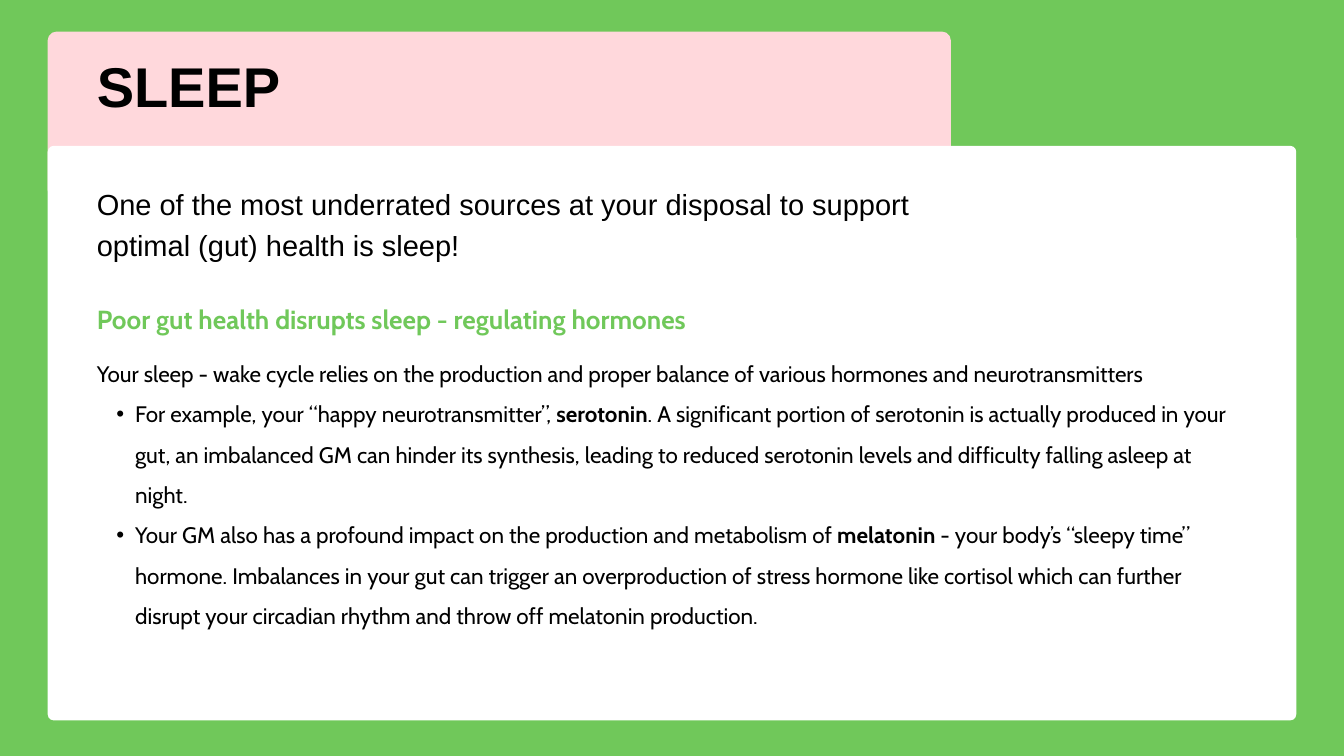
from lxml import etree
from pptx import Presentation
from pptx import util as u
from pptx.dml.color import RGBColor
from pptx.enum import shapes, text
from pptx.oxml import ns

PX = 9144  # 100 px to the inch
GREEN, PINK, WHITE, BLACK = "70C85A", "FFD8DC", "FFFFFF", "000000"


def color(value):
    return RGBColor.from_string(value)


def add_paragraph(box, index, spacing, spans, size, font, ink=BLACK):
    """Write one paragraph from (words, bold) spans."""
    frame = box.text_frame
    if index == 0:
        frame.margin_left = frame.margin_top = 0
        frame.margin_right = frame.margin_bottom = 0
        frame.word_wrap = True
        frame.auto_size = text.MSO_AUTO_SIZE.NONE
        frame.vertical_anchor = text.MSO_ANCHOR.TOP
    para = frame.paragraphs[0] if index == 0 else frame.add_paragraph()
    para.alignment = text.PP_ALIGN.LEFT
    para.line_spacing = u.Pt(spacing)
    for words, bold in spans:
        span = para.add_run()
        span.text = words
        span.font.size = u.Pt(size)
        span.font.name = font
        span.font.bold = bold
        span.font.color.rgb = color(ink)
    return para


deck = Presentation()
deck.slide_width, deck.slide_height = 2000 * PX, 1125 * PX
page = deck.slides.add_slide(deck.slide_layouts[5])
page.background.fill.solid()
page.background.fill.fore_color.rgb = color(GREEN)

# Pink tab behind the white card
panels = [
    (71, 47, 1344, 249, 13, PINK),
    (71, 217, 1858, 855, 9, WHITE),
]
for left, top, width, height, radius, fill in panels:
    panel = page.shapes.add_shape(
        shapes.MSO_SHAPE.ROUNDED_RECTANGLE,
        left * PX, top * PX, width * PX, height * PX)
    panel.adjustments[0] = radius / height
    panel.shadow.inherit = False
    panel.fill.solid()
    panel.fill.fore_color.rgb = color(fill)
    panel.line.fill.background()

# Title, brought in front of the tab
title = page.shapes.title
title.left, title.top, title.width, title.height = 144 * PX, 60 * PX, 324 * PX, 126 * PX
add_paragraph(title, 0, 84, [("SLEEP", True)], 60, "Arial")
page.shapes._spTree.append(title._element)

# Introduction and subheading
intro = page.shapes.add_textbox(144 * PX, 269 * PX, 1225 * PX, 125 * PX)
add_paragraph(intro, 0, 43.6, [(
    "One of the most underrated sources at your disposal to support "
    "optimal (gut) health is sleep!", False)], 31.1, "Arial")

subheading = page.shapes.add_textbox(144 * PX, 444 * PX, 1520 * PX, 53 * PX)
add_paragraph(subheading, 0, 39.2, [
    ("Poor gut health disrupts sleep - regulating hormones", True)], 28, "Cabin", GREEN)

# Body: a lead sentence followed by bullets
body = page.shapes.add_textbox(144 * PX, 516 * PX, 1691 * PX, 470 * PX)
body_paragraphs = [
    [("Your sleep - wake cycle relies on the production and proper balance of "
      "various hormones and neurotransmitters", False)],
    [("For example, your “happy neurotransmitter”,", False),
     (" serotonin", True),
     (". A significant portion of serotonin is actually produced in your gut, "
      "an imbalanced GM can hinder its synthesis, leading to reduced serotonin "
      "levels and difficulty falling asleep at night.", False)],
    [("Your GM also has a profound impact on the production and metabolism of ", False),
     ("melatonin", True),
     (" - your body’s “sleepy time” hormone. Imbalances in your gut can trigger "
      "an overproduction of stress hormone like cortisol which can further "
      "disrupt your circadian rhythm and throw off melatonin production.", False)],
]
for index, spans in enumerate(body_paragraphs):
    para = add_paragraph(body, index, 43.2, spans, 24, "Cabin")
    if index > 0:
        para.level = 1
        properties = para._p.get_or_add_pPr()
        properties.set("marL", str(57 * PX))
        properties.set("indent", str(-28 * PX))
        etree.SubElement(properties, ns.qn("a:buFont"), typeface="Arial")
        etree.SubElement(properties, ns.qn("a:buChar"), char="•")

deck.save("out.pptx")
